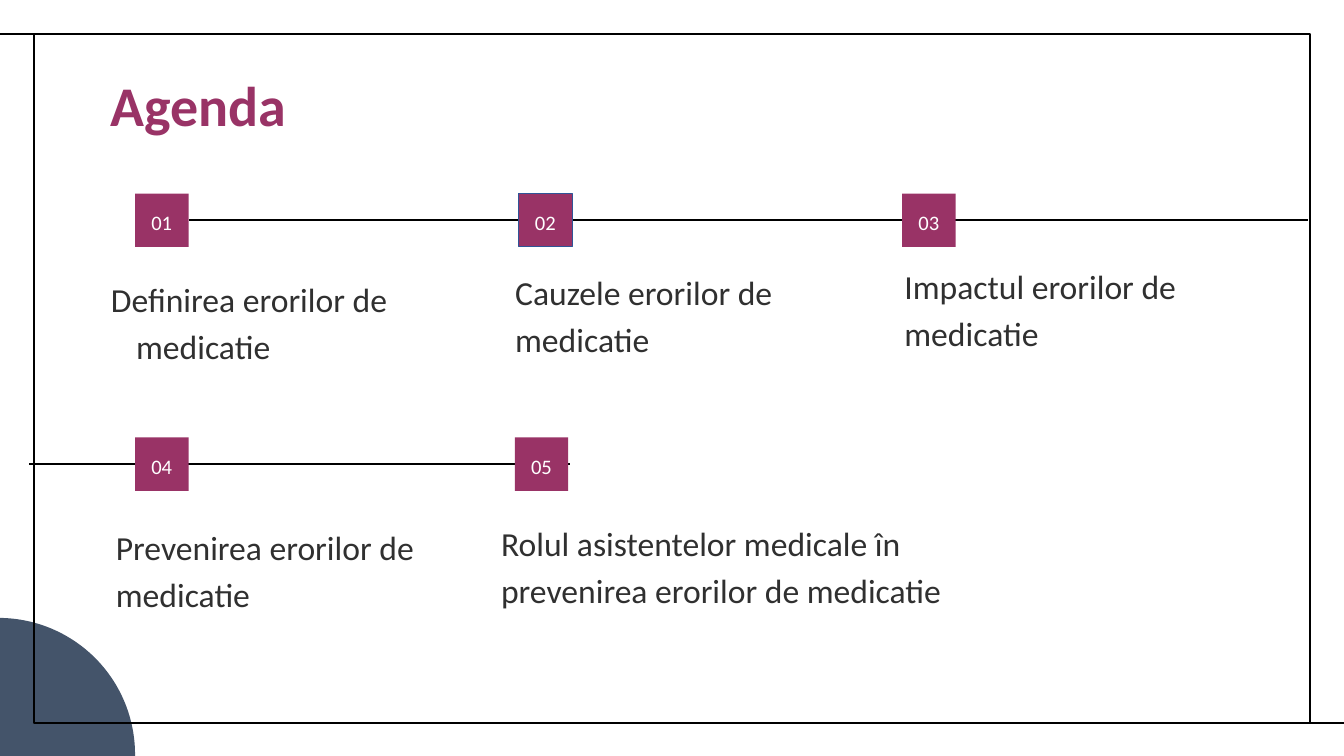
from dataclasses import dataclass

from lxml.etree import SubElement
from pptx import Presentation
from pptx.dml.color import RGBColor as Rgb
from pptx.enum.shapes import MSO_CONNECTOR as Connector, MSO_SHAPE as Preset
from pptx.enum.text import MSO_ANCHOR as Anchor, PP_ALIGN as Align
from pptx.oxml.ns import qn
from pptx.util import Inches, Pt


@dataclass(frozen=True)
class Theme:
    """Colours, font, type sizes and line widths of the slide."""
    accent: str = "993366"
    corner: str = "44546A"
    ink: str = "000000"
    body: str = "303030"
    light: str = "FFFFFF"
    outline: str = "2F5597"
    font: str = "Calibri"
    title_size: float = 40
    topic_size: float = 24
    badge_size: float = 14.7
    rule: float = 1.5
    hairline: float = 0.75


THEME = Theme()
WIDTH, HEIGHT = Inches(13.33), Inches(7.5)
INSET = Inches(0.13)
BADGE_WIDTH, BADGE_HEIGHT = 3.98, 7.07
FIRST_COLUMN, COLUMN_PITCH = 10.05, 28.54
ROWS = (25.6, 57.87)
FRAME_LEFT, FRAME_TOP, FRAME_RIGHT, FRAME_BOTTOM = 2.55, 4.53, 97.5, 95.6

# Each badge: number, column, row, outlined.
BADGES = (
    ("01", 0, 0, False),
    ("02", 1, 0, True),
    ("03", 2, 0, False),
    ("04", 0, 1, False),
    ("05", 0.99, 1, False),
)
TOPICS = (
    ("Definirea erorilor de medicatie", (7.28, 35.33, 29.78, 14.8), 0.25),
    ("Cauzele erorilor de medicatie", (37.36, 41.73, 25.2, 7.47), 0),
    ("Impactul erorilor de medicatie", (66.32, 40.93, 25.2, 7.47), 0),
    ("Prevenirea erorilor de medicatie", (7.65, 75.47, 25.2, 7.47), 0),
    ("Rolul asistentelor medicale în prevenirea erorilor de medicatie",
     (36.31, 64.53, 39.91, 17.87), 0),
)


def across(share):
    """Turn a percentage of the slide's width into a length."""
    return round(WIDTH * share / 100)


def down(share):
    """Turn a percentage of the slide's height into a length."""
    return round(HEIGHT * share / 100)


def place(area):
    """Turn left, top, width and height percentages into lengths."""
    left, top, width, height = area
    return across(left), down(top), across(width), down(height)


def add_block(page, preset, area, fill=None, line=None, weight=THEME.rule):
    """Add a flat preset shape with an optional fill and outline."""
    block = page.shapes.add_shape(preset, *place(area))
    block.shadow.inherit = False
    if fill:
        block.fill.solid()
        block.fill.fore_color.rgb = Rgb.from_string(fill)
    else:
        block.fill.background()
    if line:
        block.line.color.rgb = Rgb.from_string(line)
        block.line.width = Pt(weight)
    else:
        block.line.fill.background()
    return block


def add_rule(page, start, end, height):
    """Add a horizontal line between two shares of the width."""
    rule = page.shapes.add_connector(
        Connector.STRAIGHT, across(start), down(height), across(end), down(height))
    rule.line.color.rgb = Rgb.from_string(THEME.ink)
    rule.line.width = Pt(THEME.rule)
    SubElement(rule._element.spPr, qn("a:effectLst"))


def write(box, text, size, color, anchor, align=Align.LEFT, spacing=1.15, bold=False):
    """Write one wrapped paragraph into a box and return it."""
    frame = box.text_frame
    frame.word_wrap = True
    frame.vertical_anchor = anchor
    frame.margin_left = frame.margin_right = INSET
    frame.margin_top = frame.margin_bottom = INSET
    para = frame.paragraphs[0]
    para.alignment = align
    para.line_spacing = spacing
    span = para.add_run()
    span.text = text
    span.font.name = THEME.font
    span.font.size = Pt(size)
    span.font.bold = bold
    span.font.color.rgb = Rgb.from_string(color)
    return para


def add_badge(page, number, column, row, outlined):
    """Add a numbered square on the timeline grid."""
    area = (FIRST_COLUMN + column * COLUMN_PITCH, ROWS[row], BADGE_WIDTH, BADGE_HEIGHT)
    line = THEME.outline if outlined else None
    badge = add_block(page, Preset.RECTANGLE, area, THEME.accent, line, THEME.hairline)
    write(badge, number, THEME.badge_size, THEME.light, Anchor.MIDDLE, Align.CENTER)


def add_topic(page, text, area, hanging):
    """Add an agenda topic, with a hanging indent in inches."""
    box = page.shapes.add_textbox(*place(area))
    para = write(box, text, THEME.topic_size, THEME.body, Anchor.BOTTOM)
    if hanging:
        properties = para._p.get_or_add_pPr()
        properties.set("marL", str(Inches(hanging)))
        properties.set("indent", str(-Inches(hanging)))


def add_frame(page):
    """Add the corner disc and the frame with its two overhanging lines."""
    add_block(page, Preset.OVAL, (-10.28, 81.73, 20.33, 36.13), THEME.corner)
    area = (FRAME_LEFT, FRAME_TOP, FRAME_RIGHT - FRAME_LEFT, FRAME_BOTTOM - FRAME_TOP)
    add_block(page, Preset.RECTANGLE, area, line=THEME.ink)
    add_rule(page, 0, FRAME_LEFT, FRAME_TOP)
    add_rule(page, FRAME_RIGHT, 100, FRAME_BOTTOM)


def main():
    """Build the agenda slide and save it."""
    deck = Presentation()
    deck.slide_width, deck.slide_height = WIDTH, HEIGHT
    page = deck.slides.add_slide(deck.slide_layouts[6])
    add_frame(page)
    for row, (start, end) in zip(ROWS, ((14.03, 97.3), (2.18, 42.39))):
        add_rule(page, start, end, row + BADGE_HEIGHT / 2)
    title = page.shapes.add_textbox(*place((7.28, 8.67, 84.25, 11.2)))
    write(title, "Agenda", THEME.title_size, THEME.accent, Anchor.TOP,
          spacing=0.9, bold=True)
    for badge in BADGES:
        add_badge(page, *badge)
    for topic in TOPICS:
        add_topic(page, *topic)
    deck.save("out.pptx")


if __name__ == "__main__":
    main()
